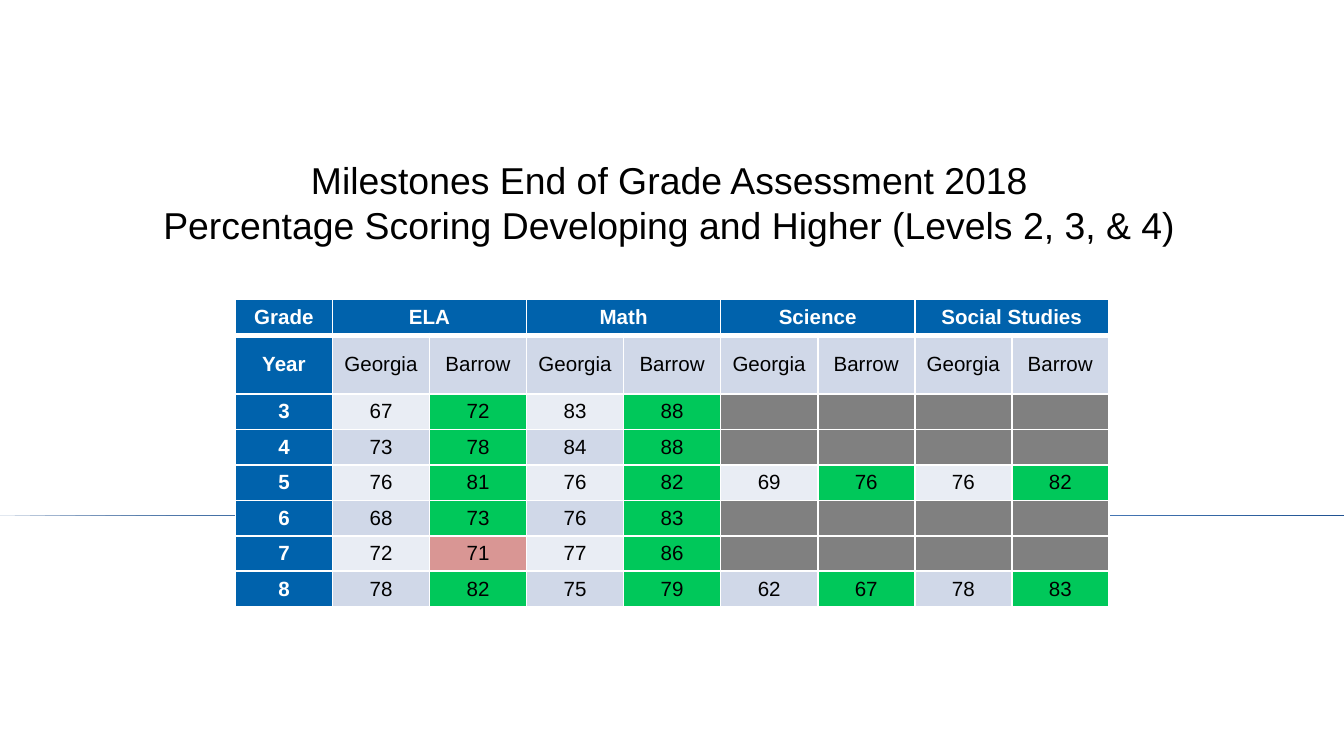
from lxml.etree import SubElement
from pptx import Presentation
from pptx.dml.color import RGBColor
from pptx.enum.shapes import MSO_SHAPE
from pptx.enum.text import MSO_ANCHOR, PP_ALIGN
from pptx.oxml.ns import qn
from pptx.util import Cm, Pt

WHITE = RGBColor(0xFF, 0xFF, 0xFF)
BLACK = RGBColor(0x00, 0x00, 0x00)
HEADER_BLUE = RGBColor(0x00, 0x62, 0xAC)
DARK_BAND = RGBColor(0xD0, 0xD8, 0xE8)
LIGHT_BAND = RGBColor(0xE9, 0xED, 0xF4)
ABOVE_GREEN = RGBColor(0x00, 0xC8, 0x5A)
BELOW_RED = RGBColor(0xD9, 0x96, 0x94)
NOT_TESTED_GRAY = RGBColor(0x80, 0x80, 0x80)
RULE_DARK = RGBColor(0x19, 0x4D, 0x8C)
RULE_LIGHT = RGBColor(0x7B, 0xAB, 0xE5)

FONT = "Arial"
CELL_SIZE = Pt(11)
TITLE = ["Milestones End of Grade Assessment 2018",
         "Percentage Scoring Developing and Higher (Levels 2, 3, & 4)"]
SUBJECTS = ["ELA", "Math", "Science", "Social Studies"]
SCORES = {
    "3": [67, 72, 83, 88],
    "4": [73, 78, 84, 88],
    "5": [76, 81, 76, 82, 69, 76, 76, 82],
    "6": [68, 73, 76, 83],
    "7": [72, 71, 77, 86],
    "8": [78, 82, 75, 79, 62, 67, 78, 83],
}


def format_paragraph(para, size, color, bold=False):
    """Centre a paragraph and give its runs one look."""
    para.alignment = PP_ALIGN.CENTER
    for span in para.runs:
        span.font.name = FONT
        span.font.size = size
        span.font.bold = bold
        span.font.color.rgb = color


def add_title(page):
    """Fill and place the title placeholder."""
    box = page.shapes.title
    box.left, box.top, box.width, box.height = Cm(1.9), Cm(2.84), Cm(21.51), Cm(1.96)
    frame = box.text_frame
    frame.word_wrap = True
    frame.vertical_anchor = MSO_ANCHOR.TOP
    frame.text = "\n".join(TITLE)
    for para in frame.paragraphs:
        format_paragraph(para, Pt(20), BLACK)


def add_rule(page, width):
    """Draw the flat gradient triangle that runs across the page."""
    rule = page.shapes.add_shape(MSO_SHAPE.RIGHT_TRIANGLE, 0, Cm(9.73), width, 0)
    rule.shadow.inherit = False
    rule.line.fill.background()
    rule.fill.gradient()
    gradient = rule.fill._fill._gradFill
    stops = gradient.find(qn("a:gsLst"))
    for stop in list(stops):
        stops.remove(stop)
    for position, color in ((0, RULE_DARK), (55, RULE_LIGHT), (100, RULE_DARK)):
        stop = SubElement(stops, qn("a:gs"), pos=str(position * 1000))
        SubElement(stop, qn("a:srgbClr"), val=str(color))
    rule.fill.gradient_angle = 310


def set_borders(cell, row):
    """Outline a cell in white, with a heavy line under the header row."""
    heavy = {(0, "a:lnB"), (1, "a:lnT")}
    properties = cell._tc.get_or_add_tcPr()
    for side in ("a:lnL", "a:lnR", "a:lnT", "a:lnB"):
        weight = Pt(3) if (row, side) in heavy else Pt(1)
        line = SubElement(properties, qn(side), w=str(weight))
        fill = SubElement(line, qn("a:solidFill"))
        SubElement(fill, qn("a:srgbClr"), val=str(WHITE))


def fill_cell(cell, row, text, fill, color, bold):
    """Write and format one table cell."""
    cell.margin_left = cell.margin_right = Cm(0.18)
    cell.margin_top = cell.margin_bottom = 0
    cell.vertical_anchor = MSO_ANCHOR.MIDDLE
    set_borders(cell, row)
    cell.fill.solid()
    cell.fill.fore_color.rgb = fill
    para = cell.text_frame.paragraphs[0]
    if text:
        para.text = text
    else:
        SubElement(para._p, qn("a:endParaRPr"), sz=str(int(CELL_SIZE.pt * 100)))
    format_paragraph(para, CELL_SIZE, color, bold)


def cell_fill(rows, row, column):
    """Choose a cell's colour from its place and its score."""
    if row == 0 or column == 0:
        return HEADER_BLUE
    if not rows[row][column]:
        return NOT_TESTED_GRAY
    if row > 1 and column % 2 == 0:
        ahead = int(rows[row][column]) > int(rows[row][column - 1])
        return ABOVE_GREEN if ahead else BELOW_RED
    return DARK_BAND if row % 2 else LIGHT_BAND


def table_rows():
    """Build the text of the table, row by row."""
    subject_cells = [text for subject in SUBJECTS for text in (subject, "")]
    rows = [["Grade"] + subject_cells, ["Year"] + ["Georgia", "Barrow"] * len(SUBJECTS)]
    for grade, scores in SCORES.items():
        blanks = [""] * (2 * len(SUBJECTS) - len(scores))
        rows.append([grade] + [str(score) for score in scores] + blanks)
    return rows


def add_score_table(page):
    """Add the table of scores by grade and subject."""
    rows = table_rows()
    table = page.shapes.add_table(len(rows), len(rows[0]), Cm(4.45), Cm(5.66),
                                  Cm(16.51), Cm(5.8)).table
    for row, texts in enumerate(rows):
        table.rows[row].height = Cm(1.11) if row == 1 else Cm(0.67)
        for column, text in enumerate(texts):
            heading = row == 0 or column == 0
            fill_cell(table.cell(row, column), row, text, cell_fill(rows, row, column),
                      WHITE if heading else BLACK, heading)
    for column in range(1, len(rows[0]), 2):
        table.cell(0, column).merge(table.cell(0, column + 1))


def main():
    """Build the slide and save it."""
    deck = Presentation()
    deck.slide_width, deck.slide_height = Cm(25.4), Cm(14.28)
    page = deck.slides.add_slide(deck.slide_layouts[5])
    add_rule(page, deck.slide_width)
    add_score_table(page)
    add_title(page)
    deck.save("out.pptx")


if __name__ == "__main__":
    main()
